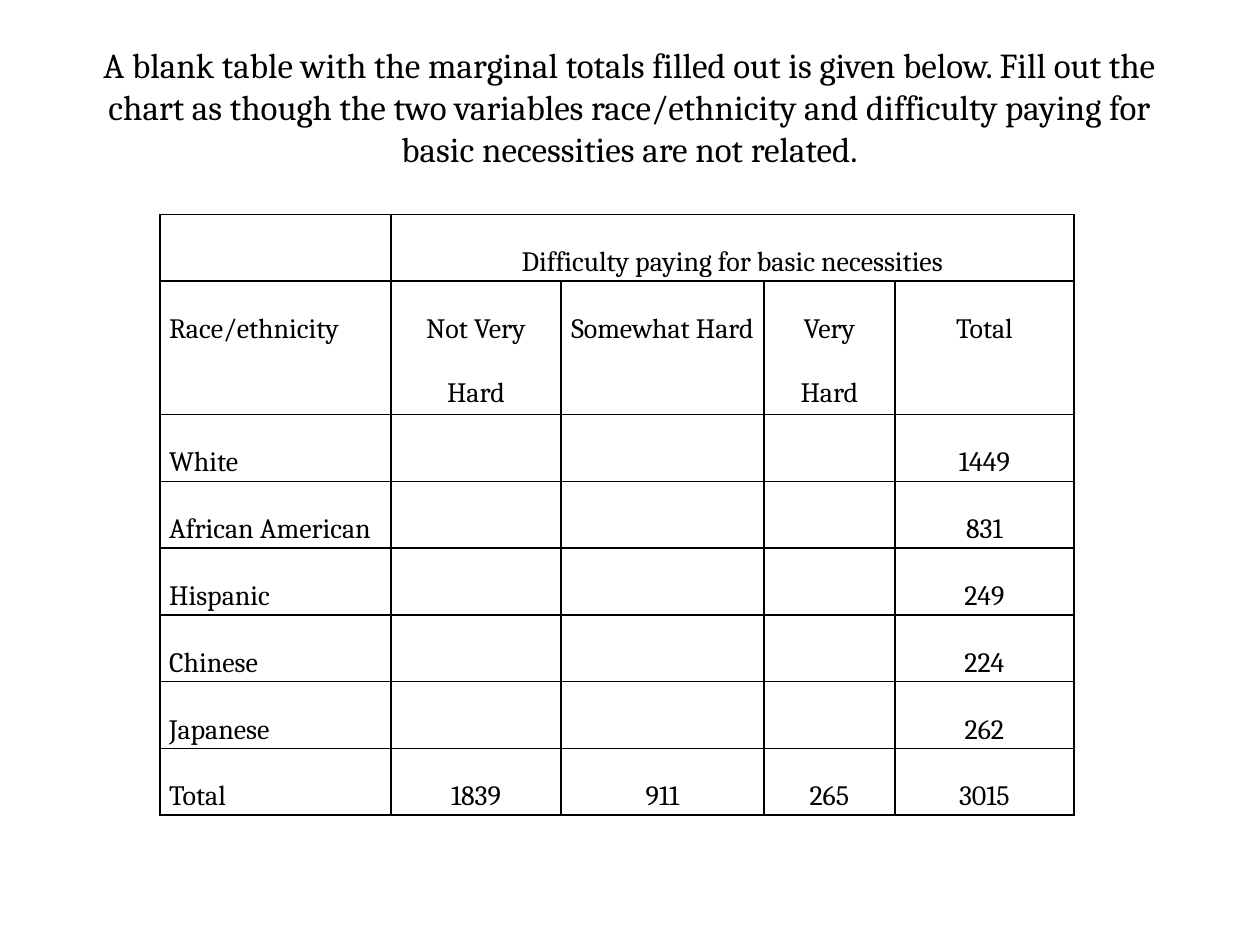
from lxml import etree
from pptx import Presentation
from pptx.dml.color import RGBColor
from pptx.enum import text
from pptx.oxml.ns import qn
from pptx.util import Cm, Pt

TITLE = ("A blank table with the marginal totals filled out is given below. "
         "Fill out the chart as though the two variables race/ethnicity and "
         "difficulty paying for basic necessities are not related.")
ROWS = [
    ["", "Difficulty paying for basic necessities", "", "", ""],
    ["Race/ethnicity", "Not Very Hard", "Somewhat Hard", "Very Hard", "Total"],
    ["White", "", "", "", "1449"],
    ["African American", "", "", "", "831"],
    ["Hispanic", "", "", "", "249"],
    ["Chinese", "", "", "", "224"],
    ["Japanese", "", "", "", "262"],
    ["Total", "1839", "911", "265", "3015"],
]
HEADING_ROW = 1
COL_WIDTHS = [4.65, 3.43, 4.09, 2.64, 3.61]
ROW_HEIGHT = 1.346
THEME = {"font": "Cambria", "ink": "000000", "title": 20, "body": 16, "border": 1}


def format_text(p, size, align):
    p.alignment = align
    for r in p.runs:
        r.font.name = THEME["font"]
        r.font.size = Pt(size)
        r.font.bold = False
        r.font.color.rgb = RGBColor.from_string(THEME["ink"])


def add_borders(cell):
    """Rule all four sides; border elements must precede the fill."""
    tc_pr = cell._tc.get_or_add_tcPr()
    for i, side in enumerate(("lnL", "lnR", "lnT", "lnB")):
        ln = etree.Element(qn(f"a:{side}"), w=str(Pt(THEME["border"])))
        fill = etree.SubElement(ln, qn("a:solidFill"))
        etree.SubElement(fill, qn("a:srgbClr"), val=THEME["ink"])
        tc_pr.insert(i, ln)


def add_title(slide):
    sp = slide.shapes.title
    sp.left, sp.top, sp.width, sp.height = Cm(1.52), Cm(0.3), Cm(22.35), Cm(3.71)
    tf = sp.text_frame
    tf.text = TITLE
    tf.word_wrap = True
    tf.auto_size = text.MSO_AUTO_SIZE.NONE
    tf.vertical_anchor = text.MSO_ANCHOR.BOTTOM
    tf.margin_bottom = Cm(0.6)
    format_text(tf.paragraphs[0], THEME["title"], text.PP_ALIGN.CENTER)


def add_totals_table(slide):
    heights = [ROW_HEIGHT * (2 if i == HEADING_ROW else 1) for i in range(len(ROWS))]
    table = slide.shapes.add_table(
        len(ROWS), len(COL_WIDTHS), Cm(3.23), Cm(4.32),
        Cm(sum(COL_WIDTHS)), Cm(sum(heights))).table
    table.first_row = table.horz_banding = False
    for col, width in zip(table.columns, COL_WIDTHS):
        col.width = Cm(width)
    for row, height, values in zip(table.rows, heights, ROWS):
        row.height = Cm(height)
        for c, (cell, value) in enumerate(zip(row.cells, values)):
            cell.margin_left = cell.margin_right = Cm(0.18)
            cell.margin_top = cell.margin_bottom = 0
            cell.fill.background()
            add_borders(cell)
            if value:
                cell.text = value
                p = cell.text_frame.paragraphs[0]
                p.line_spacing = 2.0
                format_text(p, THEME["body"],
                            text.PP_ALIGN.CENTER if c else text.PP_ALIGN.LEFT)
    table.cell(0, 1).merge(table.cell(0, len(COL_WIDTHS) - 1))


def main():
    prs = Presentation()
    prs.slide_width, prs.slide_height = Cm(25.4), Cm(19.05)
    slide = prs.slides.add_slide(prs.slide_layouts.get_by_name("Title Only"))
    add_title(slide)
    add_totals_table(slide)
    prs.save("out.pptx")


if __name__ == "__main__":
    main()
